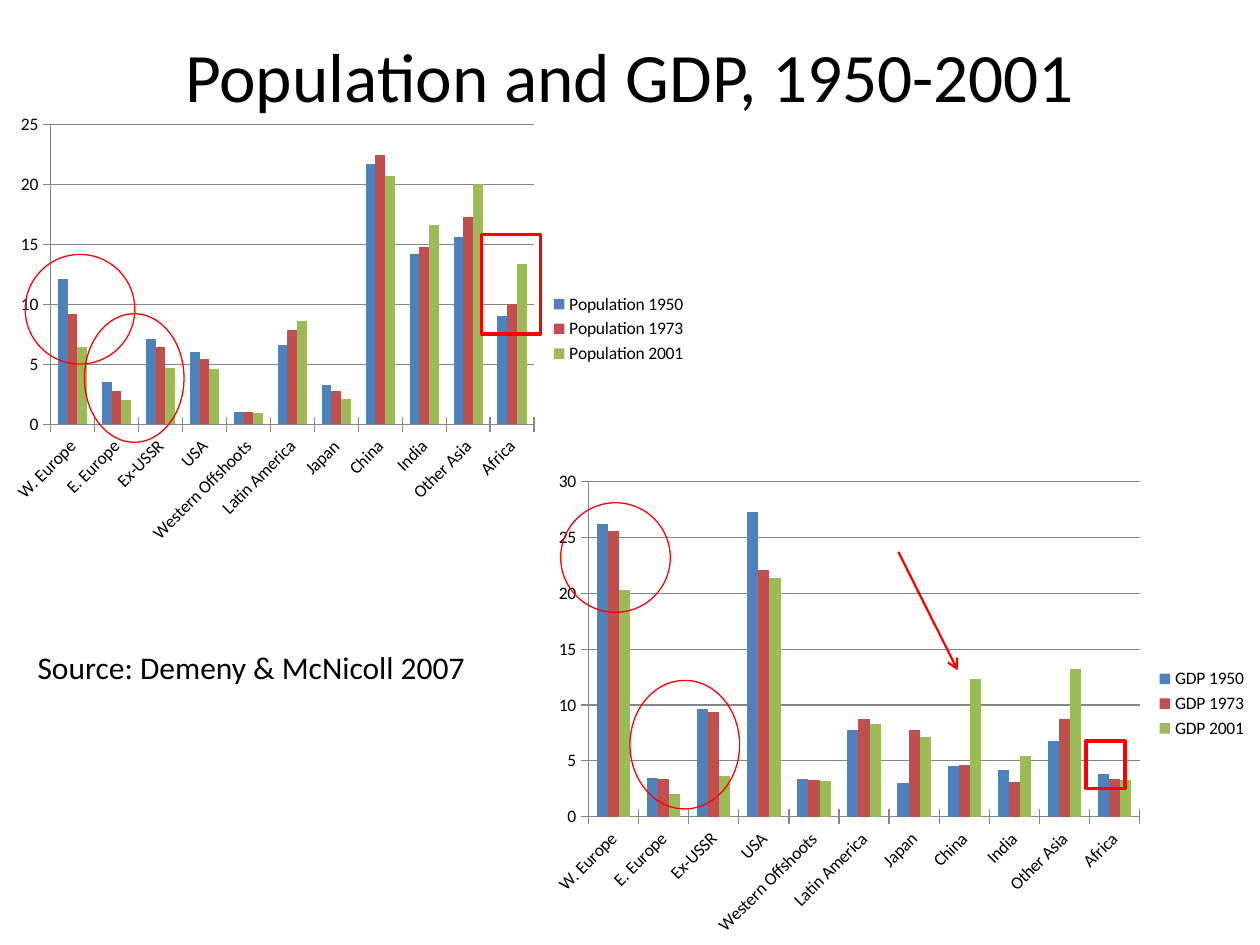
from lxml import etree
from pptx import Presentation
from pptx import util as u
from pptx.chart import data as chart_data
from pptx.dml import color
from pptx.enum import chart as chart_enum
from pptx.enum import shapes, text
from pptx.oxml import ns

deck = Presentation()
deck.slide_width, deck.slide_height = u.Inches(10), u.Inches(7.5)
page = deck.slides.add_slide(deck.slide_layouts[5])


def share(*percents):
    """Turn alternating x and y percentages of the slide into lengths."""
    sides = (deck.slide_width, deck.slide_height)
    return [round(sides[i % 2] * value / 100) for i, value in enumerate(percents)]


def paint(target, hex_color):
    """Give a fill or a line one solid colour; a font only needs the colour."""
    if hasattr(target, "solid"):
        target.solid()
        target = target.fore_color
    else:
        target = target.color
    target.rgb = color.RGBColor.from_string(hex_color)


BLACK, RED, GREY = "000000", "FF0000", "868686"
SERIES_COLORS = ("4F81BD", "C0504D", "9BBB59")
YEARS = (1950, 1973, 2001)
REGIONS = ("W. Europe", "E. Europe", "Ex-USSR", "USA", "Western Offshoots",
           "Latin America", "Japan", "China", "India", "Other Asia", "Africa")

# Charts: measure, place, axis maximum, one row of values per year
charts = [
    ("Population", (0, 11.2, 55.5, 47.2), 25, [
        (12.1, 3.5, 7.1, 6, 1, 6.6, 3.3, 21.7, 14.2, 15.6, 9),
        (9.2, 2.8, 6.4, 5.4, 1, 7.9, 2.8, 22.5, 14.8, 17.3, 10),
        (6.4, 2, 4.7, 4.6, 0.9, 8.6, 2.1, 20.7, 16.6, 20, 13.4)]),
    ("GDP", (42.9, 48.93, 57.1, 51.07), 30, [
        (26.2, 3.5, 9.6, 27.3, 3.4, 7.8, 3, 4.5, 4.2, 6.8, 3.8),
        (25.6, 3.4, 9.4, 22.1, 3.3, 8.7, 7.8, 4.6, 3.1, 8.7, 3.4),
        (20.3, 2, 3.6, 21.4, 3.2, 8.3, 7.1, 12.3, 5.4, 13.2, 3.3)]),
]
for measure, place, maximum, rows in charts:
    table = chart_data.CategoryChartData()
    table.categories = REGIONS
    for year, values in zip(YEARS, rows):
        table.add_series(f"{measure} {year}", values)
    frame = page.shapes.add_chart(
        chart_enum.XL_CHART_TYPE.COLUMN_CLUSTERED, *share(*place), table)
    chart = frame.chart
    chart.has_title = False
    chart.font.name, chart.font.size = "Calibri", u.Pt(10)
    paint(chart.font, BLACK)
    chart.has_legend = True
    chart.legend.position = chart_enum.XL_LEGEND_POSITION.RIGHT
    chart.legend.include_in_layout = False

    plot = chart.plots[0]
    plot.vary_by_categories = False
    plot.gap_width, plot.overlap = 150, 0
    for series, hex_color in zip(plot.series, SERIES_COLORS):
        paint(series.format.fill, hex_color)
        series.invert_if_negative = False

    for axis in (chart.category_axis, chart.value_axis):
        axis.major_tick_mark = chart_enum.XL_TICK_MARK.CROSS
        axis.minor_tick_mark = chart_enum.XL_TICK_MARK.NONE
        paint(axis.format.line, GREY)
    chart.value_axis.minimum_scale, chart.value_axis.maximum_scale = 0, maximum
    chart.value_axis.major_unit = 5
    chart.value_axis.has_major_gridlines = True
    paint(chart.value_axis.major_gridlines.format.line, GREY)

# Title, in front of the charts and raised by its bottom margin
title = page.shapes.title
frame.element.addnext(title.element)
title.left, title.top, title.width, title.height = share(5, 4, 90, 16.67)
title.text_frame.text = "Population and GDP, 1950-2001"
title.text_frame.vertical_anchor = text.MSO_ANCHOR.MIDDLE
title.text_frame.margin_top, title.text_frame.margin_bottom = 0, u.Inches(0.67)
title.text_frame.paragraphs[0].alignment = text.PP_ALIGN.CENTER

# Red outlines around the regions of interest
OVAL, RECTANGLE = shapes.MSO_SHAPE.OVAL, shapes.MSO_SHAPE.RECTANGLE
outlines = [
    (OVAL, 0.75, (2, 26.93, 8.7, 11.6)),
    (OVAL, 0.75, (44.5, 53.2, 8.7, 11.6)),
    (RECTANGLE, 2, (38.2, 24.8, 4.7, 10.53)),
    (RECTANGLE, 2, (86.2, 78.4, 3.1, 5.07)),
    (OVAL, 0.75, (50, 72, 8.7, 13.6)),
    (OVAL, 0.75, (6.7, 33.2, 7.9, 13.6)),
]
for kind, weight, place in outlines:
    outline = page.shapes.add_shape(kind, *share(*place))
    outline.shadow.inherit = False
    outline.fill.background()
    outline.line.width = u.Pt(weight)
    paint(outline.line, RED)

# Arrow to China's GDP
arrow = page.shapes.add_connector(
    shapes.MSO_CONNECTOR.STRAIGHT, *share(71.3, 58.4, 76, 70.93))
arrow.line.width = u.Pt(1.25)
paint(arrow.line, RED)
properties = arrow.element.spPr
etree.SubElement(properties.find(ns.qn("a:ln")), ns.qn("a:tailEnd"), type="arrow")
etree.SubElement(properties, ns.qn("a:effectLst"))

# Source
source = page.shapes.add_textbox(*share(2, 67.87, 38.6, 5.33))
source.text_frame.word_wrap = True
source.text_frame.auto_size = text.MSO_AUTO_SIZE.SHAPE_TO_FIT_TEXT
source.text_frame.text = "Source: Demeny & McNicoll 2007"

for box, size in ((title, 39.6), (source, 18)):
    span = box.text_frame.paragraphs[0].runs[0]
    span.font.name, span.font.size = "Calibri", u.Pt(size)
    paint(span.font, BLACK)

deck.save("out.pptx")
